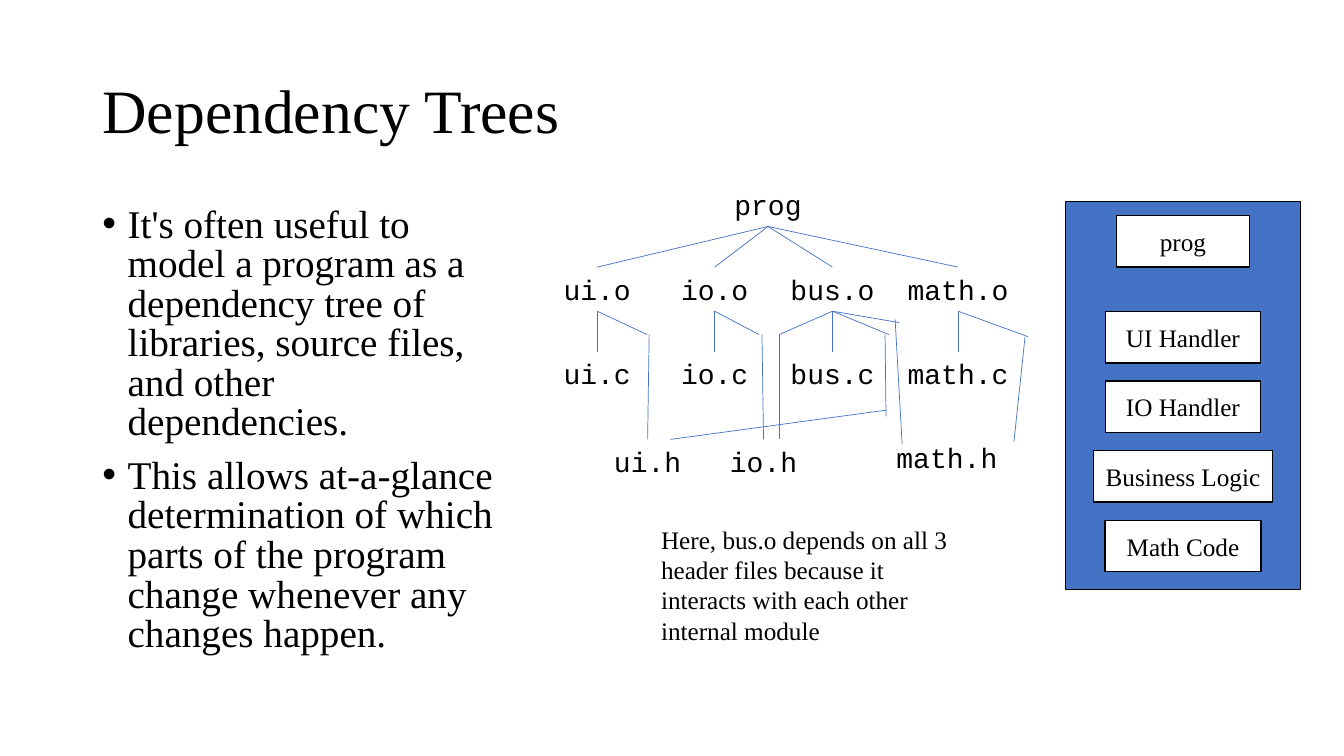
from lxml import etree
from pptx import Presentation
from pptx import util as u
from pptx.dml.color import RGBColor
from pptx.enum import shapes, text
from pptx.oxml import ns

BLACK = RGBColor(0x00, 0x00, 0x00)
WHITE = RGBColor(0xFF, 0xFF, 0xFF)
BLUE = RGBColor(0x44, 0x72, 0xC4)
SERIF = "Times New Roman"
MONO = "Courier New"


class SlideBuilder:
    """Draws styled elements on one slide, with all lengths in points."""

    def __init__(self, presentation):
        self.slide = presentation.slides.add_slide(presentation.slide_layouts[1])
        self.target = self.slide.shapes

    def start_group(self):
        self.target = self.slide.shapes.add_group_shape().shapes

    def end_group(self):
        self.target = self.slide.shapes

    def add_words(self, paragraph, words, size, font=SERIF, align=text.PP_ALIGN.LEFT):
        paragraph.alignment = align
        run = paragraph.add_run()
        run.text = words
        run.font.name = font
        run.font.size = u.Pt(size)
        run.font.color.rgb = BLACK

    def placeholder(self, index, box, items, size, spacing, anchor):
        shape = self.slide.placeholders[index]
        shape.left, shape.top, shape.width, shape.height = map(u.Pt, box)
        frame = shape.text_frame
        frame.auto_size = text.MSO_AUTO_SIZE.NONE
        frame.vertical_anchor = anchor
        for position, words in enumerate(items):
            paragraph = frame.add_paragraph() if position else frame.paragraphs[0]
            paragraph.line_spacing = spacing
            self.add_words(paragraph, words, size)
        return frame.paragraphs

    def title(self, box, words):
        self.placeholder(0, box, [words], 44, 0.9, text.MSO_ANCHOR.MIDDLE)

    def bullets(self, box, items):
        for paragraph in self.placeholder(1, box, items, 28, 0.84, text.MSO_ANCHOR.TOP):
            paragraph.space_before = u.Pt(10)
            properties = paragraph._p.get_or_add_pPr()
            properties.set("marL", str(u.Pt(18)))
            properties.set("indent", str(u.Pt(-18)))

    def rectangle(self, center, top, width, height, fill, words=None):
        shape = self.target.add_shape(
            shapes.MSO_SHAPE.RECTANGLE,
            u.Pt(center - width / 2), u.Pt(top), u.Pt(width), u.Pt(height))
        shape.shadow.inherit = False
        shape.fill.solid()
        shape.fill.fore_color.rgb = fill
        shape.line.color.rgb = BLACK
        shape.line.width = u.Pt(1)
        if words:
            frame = shape.text_frame
            frame.vertical_anchor = text.MSO_ANCHOR.MIDDLE
            self.add_words(frame.paragraphs[0], words, 18, align=text.PP_ALIGN.CENTER)

    def label(self, center, top, width, height, words, size, font, align):
        shape = self.target.add_textbox(
            u.Pt(center - width / 2), u.Pt(top), u.Pt(width), u.Pt(height))
        frame = shape.text_frame
        frame.word_wrap = True
        frame.auto_size = text.MSO_AUTO_SIZE.SHAPE_TO_FIT_TEXT
        self.add_words(frame.paragraphs[0], words, size, font, align)
        return shape

    def file_label(self, center, top, width, name):
        return self.label(center, top, width, 31.5, name, 20, MONO, text.PP_ALIGN.CENTER)

    def line(self, start, end):
        """Draws from a point or a shape's bottom to a point or a shape's top."""
        points = []
        for stop, side in ((start, 2), (end, 0)):
            if isinstance(stop, tuple):
                points += map(u.Pt, stop)
            else:
                edge = stop.top + (stop.height if side == 2 else 0)
                points += [stop.left + stop.width // 2, edge]
        connector = self.target.add_connector(shapes.MSO_CONNECTOR.STRAIGHT, *points)
        connector.line.color.rgb = BLUE
        connector.line.width = u.Pt(0.5)
        etree.SubElement(connector._element.spPr, ns.qn("a:effectLst"))
        if not isinstance(start, tuple):
            connector.begin_connect(start, 2)
        if not isinstance(end, tuple):
            connector.end_connect(end, 0)


def draw_modules(builder):
    center = 845
    builder.start_group()
    builder.rectangle(center, 144, 168, 277, BLUE)
    builder.rectangle(center, 154, 95, 36.7, WHITE, "prog")
    modules = [("UI Handler", 111), ("IO Handler", 111),
               ("Business Logic", 128.2), ("Math Code", 111.6)]
    for row, (name, width) in enumerate(modules):
        builder.rectangle(center, 222.5 + 49.7 * row, width, 36.7, WHITE, name)
    builder.end_group()


def draw_tree(builder):
    builder.start_group()
    program = builder.file_label(548.6, 130.3, 76.3, "prog")
    columns = {"ui": (426.6, 65.5), "io": (510.5, 63.4),
               "bus": (594.7, 76.3), "math": (684.4, 95.8)}
    objects = {}
    for name, (center, width) in columns.items():
        objects[name] = builder.file_label(center, 190.8, width, f"{name}.o")
        source = builder.file_label(center, 251.3, width, f"{name}.c")
        builder.line(program, objects[name])
        builder.line(objects[name], source)

    ui_header = builder.file_label(462.6, 313.9, 65.5, "ui.h")
    io_header = builder.file_label(545.4, 313.9, 65.5, "io.h")
    builder.file_label(676.4, 311, 95.8, "math.h")

    branches = [("ui", (462.2, 239)), ("io", (542.2, 239)), ("bus", (556.6, 239)),
                ("bus", (635, 239)), ("bus", (642.2, 230.4)), ("math", (734.4, 240.5))]
    for name, bend in branches:
        builder.line(objects[name], bend)

    drops = [((463.7, 239), ui_header), ((544.3, 239), io_header),
             ((556.6, 239), (556.6, 313.9)), ((632.2, 239), (632.9, 297.4)),
             ((632.9, 293), (478.8, 313.9)), ((639.4, 228.2), (644.4, 317.5)),
             ((732.2, 240.5), (724.3, 315.4))]
    for start, end in drops:
        builder.line(start, end)
    builder.end_group()


def main():
    presentation = Presentation()
    presentation.slide_width, presentation.slide_height = u.Pt(960), u.Pt(540)
    builder = SlideBuilder(presentation)
    builder.title((66, 28.8, 828, 104.4), "Dependency Trees")
    builder.bullets((66, 144, 300, 342.7), [
        "It's often useful to model a program as a dependency tree of libraries, "
        "source files, and other dependencies.",
        "This allows at-a-glance determination of which parts of the program "
        "change whenever any changes happen.",
    ])
    draw_modules(builder)
    draw_tree(builder)
    builder.label(
        577.4, 370.8, 224.6, 94.3,
        "Here, bus.o depends on all 3 header files because it interacts with "
        "each other internal module",
        18, SERIF, text.PP_ALIGN.LEFT)
    presentation.save("out.pptx")


if __name__ == "__main__":
    main()
